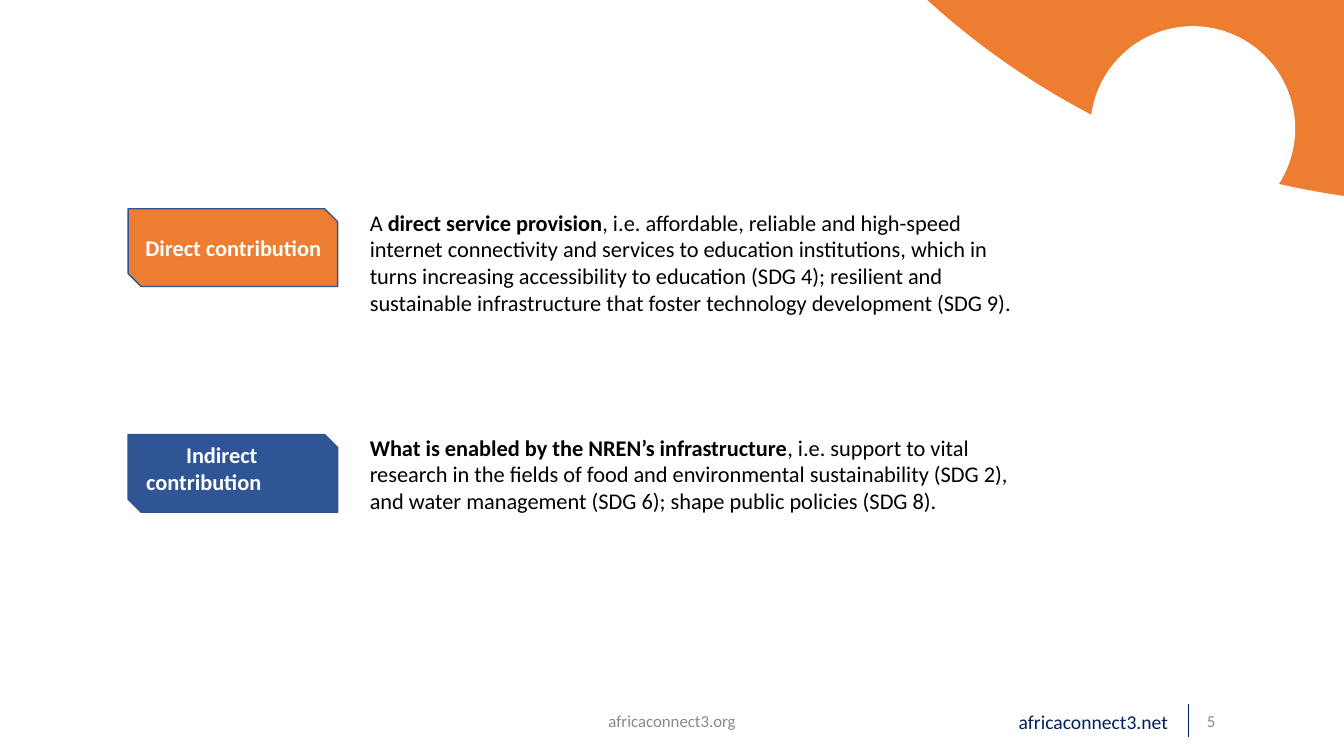
"""Build the slide on direct and indirect contributions."""
import pptx
import pptx.util
import pptx.dml.color
import pptx.enum.shapes
import pptx.enum.text
from pptx.oxml.ns import qn
from lxml import etree

Cm, Pt = pptx.util.Cm, pptx.util.Pt
SHAPES = pptx.enum.shapes.MSO_SHAPE
ALIGN = pptx.enum.text.PP_ALIGN
ANCHOR = pptx.enum.text.MSO_ANCHOR

ORANGE, BLUE, EDGE, NAVY = "ED7D31", "2F5597", "32538F", "002060"
WHITE, BLACK, GREY, PAGE_GREY = "FFFFFF", "000000", "888888", "8C8C8C"

CIRCLES = [((16.94, -34.24, 39.37, 39.37), ORANGE),
           ((27.48, 0.66, 5.16, 5.16), WHITE)]

CONTRIBUTIONS = [
    {"tag": (3.23, 5.26, 5.28, 1.96), "fill": ORANGE,
     "label": "Direct contribution", "label_at": (3.48, 5.77, 4.8, 0.94),
     "body_at": (9.19, 5.13, 16.89, 3.61),
     "body": [("A ", False), ("direct service provision", True),
              (", i.e. affordable, reliable and high-speed internet connectivity and "
               "services to education institutions, which in turns increasing "
               "accessibility to education (SDG 4); resilient and sustainable "
               "infrastructure that foster technology development (SDG 9).", False)]},
    {"tag": (3.23, 10.95, 5.28, 1.96), "fill": BLUE,
     "label": "Indirect contribution\t", "label_at": (3.23, 10.64, 4.72, 2.31),
     "body_at": (9.19, 10.8, 16.89, 2.31),
     "body": [("What is enabled by the NREN’s infrastructure", True),
              (", i.e. support to vital research in the fields of food and "
               "environmental sustainability (SDG 2), and water management (SDG 6); "
               "shape public policies (SDG 8).", False)]},
]

FOOTERS = [
    ("africaconnect3.org", (11.35, 17.65, 11.18, 1.02), 12, GREY, ALIGN.CENTER),
    ("africaconnect3.net", (18.39, 17.78, 11.18, 0.81), 14, NAVY, ALIGN.RIGHT),
    ("5", (30.2, 17.75, 0.56, 0.81), 12, PAGE_GREY, ALIGN.RIGHT),
]
DIVIDER = (29.95, 17.75, 29.95, 18.57)


def color(value):
    return pptx.dml.color.RGBColor.from_string(value)


def lengths(values):
    return [Cm(value) for value in values]


def add_filled(page, kind, place, fill, edge=None):
    shape = page.shapes.add_shape(kind, *lengths(place))
    shape.shadow.inherit = False
    shape.fill.solid()
    shape.fill.fore_color.rgb = color(fill)
    if edge:
        shape.line.color.rgb = color(edge)
        shape.line.width = Pt(1)
    else:
        shape.line.fill.background()


def add_text(page, place, spans, size, ink, align=ALIGN.LEFT, anchor=ANCHOR.MIDDLE):
    frame = page.shapes.add_textbox(*lengths(place)).text_frame
    margins = {f"margin_{side}": Cm(0.13) for side in ("left", "right", "top", "bottom")}
    for name, value in {"word_wrap": True, "vertical_anchor": anchor, **margins}.items():
        setattr(frame, name, value)
    para = frame.paragraphs[0]
    para.alignment = align
    for text, bold in spans:
        span = para.add_run()
        span.text = text
        for name, value in {"name": "Calibri", "size": Pt(size), "bold": bold}.items():
            setattr(span.font, name, value)
        span.font.color.rgb = color(ink)


def add_divider(page):
    line = page.shapes.add_connector(
        pptx.enum.shapes.MSO_CONNECTOR.STRAIGHT, *lengths(DIVIDER))
    line.line.color.rgb = color(NAVY)
    line.line.width = Pt(1)
    etree.SubElement(line._element.spPr, qn("a:effectLst"))


def main():
    deck = pptx.Presentation()
    deck.slide_width, deck.slide_height = lengths((33.87, 19.05))
    page = deck.slides.add_slide(deck.slide_layouts[6])
    add_divider(page)
    for place, fill in CIRCLES:
        add_filled(page, SHAPES.OVAL, place, fill)
    for item in CONTRIBUTIONS:
        add_filled(page, SHAPES.SNIP_2_DIAG_RECTANGLE, item["tag"], item["fill"], EDGE)
        add_text(page, item["label_at"], [(item["label"], True)], 16, WHITE, ALIGN.CENTER)
        add_text(page, item["body_at"], item["body"], 16, BLACK, anchor=ANCHOR.TOP)
    for text, place, size, ink, align in FOOTERS:
        add_text(page, place, [(text, False)], size, ink, align)
    deck.save("out.pptx")


if __name__ == "__main__":
    main()
